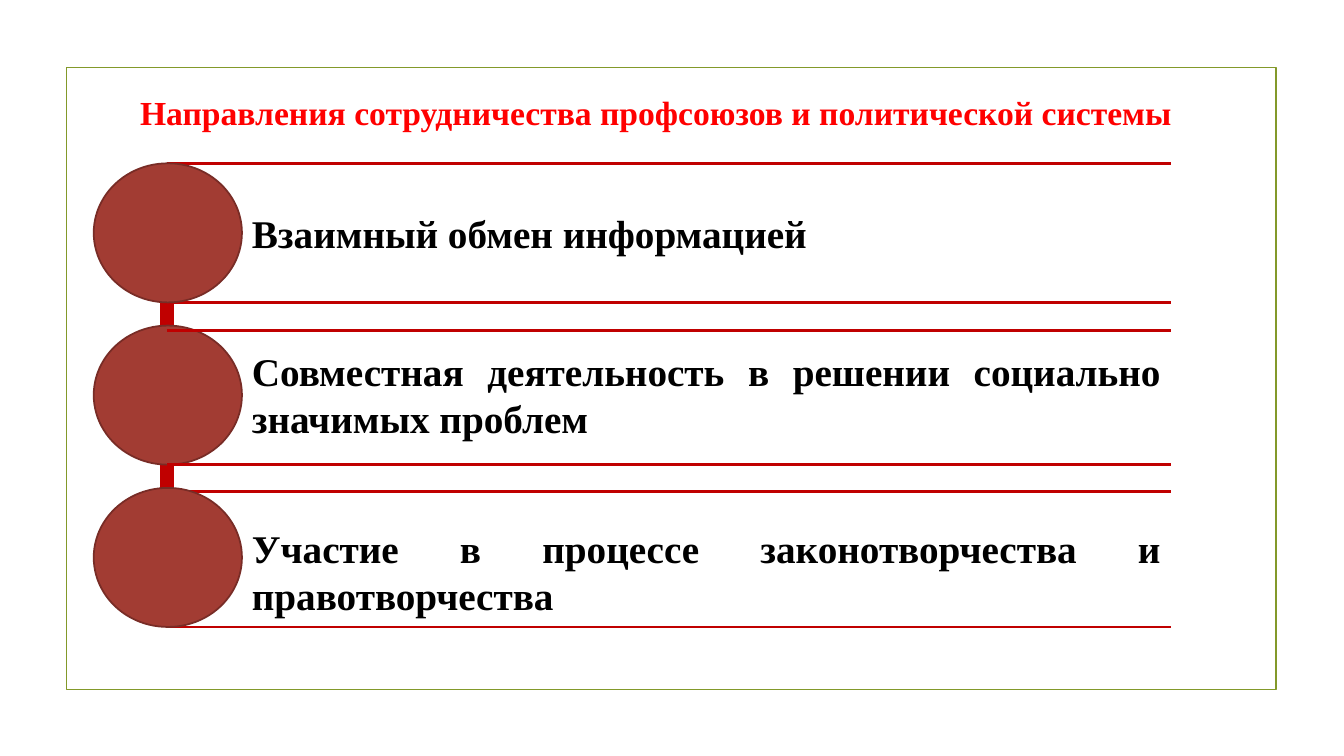
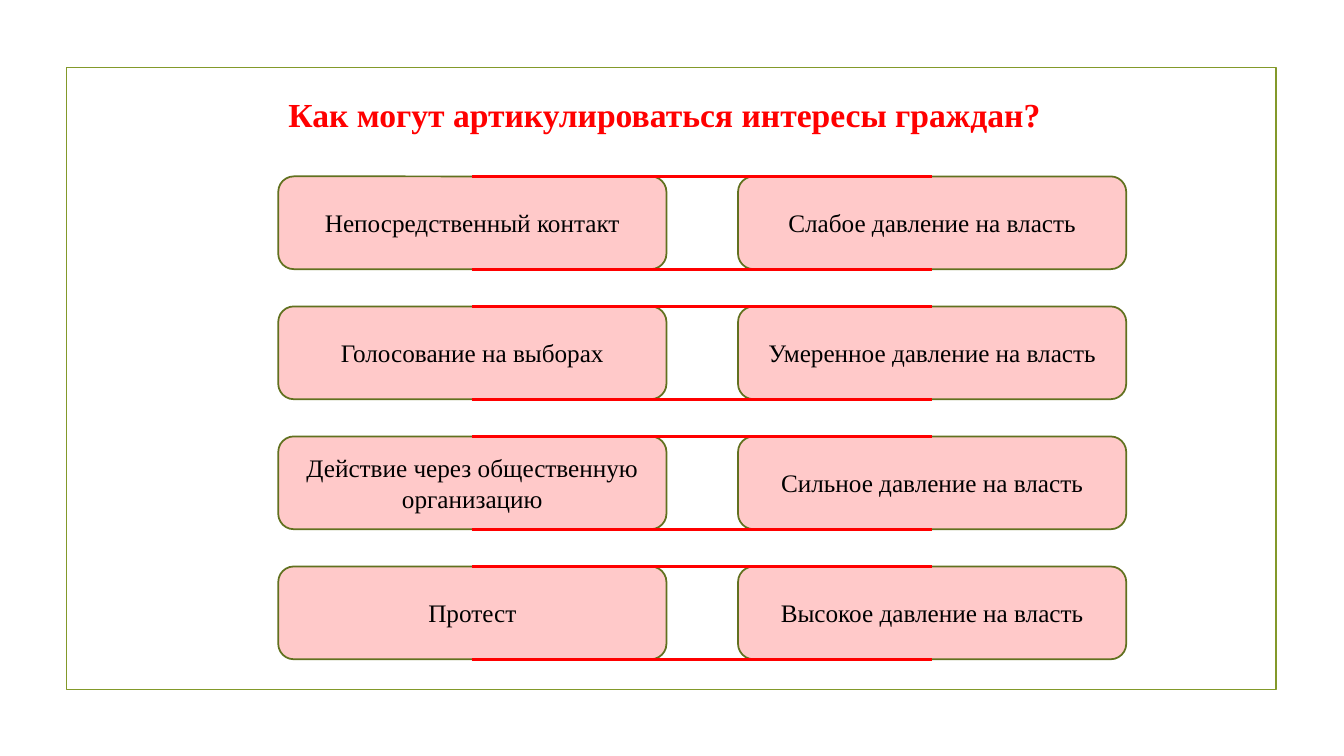
"""Build two slides on how unions and citizens interact with political power."""
from dataclasses import dataclass

from lxml import etree
from pptx import Presentation
from pptx import util as u
from pptx.dml.color import RGBColor
from pptx.enum import shapes, text
from pptx.oxml import ns

SCALE = u.Inches(1) // 100
SLIDE_SIZE = (1333, 750)
FRAME = (66, 67, 1200, 617)


@dataclass(frozen=True)
class Theme:
    """Colours, type sizes and line widths of the deck."""
    font: str = "Times New Roman"
    frame: str = "83992A"
    title: str = "FF0000"
    ink: str = "000000"
    rail: str = "C00000"
    bead: str = "A23C33"
    bead_edge: str = "782C26"
    card: str = "FF0000"
    card_edge: str = "61711F"
    card_opacity: int = 21
    title_size: int = 24
    direction_size: int = 28
    card_size: int = 18
    edge_width: float = 1.25
    rule_width: int = 2
    spine_width: int = 10


THEME = Theme()


@dataclass(frozen=True)
class Direction:
    """A direction of cooperation and its offsets from the top of its bead."""
    label: str
    rule_offset: int
    label_offset: int
    label_height: int
    rules_in_front: bool = False


DIRECTIONS = (
    Direction("Взаимный обмен информацией", 0, 41, 57),
    Direction("Совместная деятельность в решении социально значимых проблем",
              5, 17, 104, rules_in_front=True),
    Direction("Участие в процессе законотворчества и правотворчества", 4, 31, 104),
)

PRESSURE = (
    ("Непосредственный контакт", "Слабое давление на власть"),
    ("Голосование на выборах", "Умеренное давление на власть"),
    ("Действие через общественную организацию", "Сильное давление на власть"),
    ("Протест", "Высокое давление на власть"),
)


def px(*lengths):
    """Turn px lengths into EMU."""
    return [u.Emu(length * SCALE) for length in lengths]


def write(frame, wording, size, color, align, bold=False):
    """Write one formatted paragraph into a text frame."""
    frame.word_wrap = True
    frame.text = wording
    paragraph = frame.paragraphs[0]
    paragraph.alignment = align
    font = paragraph.font
    font.name, font.size, font.bold = THEME.font, u.Pt(size), bold
    font.color.rgb = RGBColor.from_string(color)


def add_outline(slide, kind, box, edge, fill=None, opacity=100):
    """Add a preset shape with an edge and an optional fill."""
    shape = slide.shapes.add_shape(kind, *px(*box))
    shape.shadow.inherit = False
    shape.line.color.rgb = RGBColor.from_string(edge)
    shape.line.width = u.Pt(THEME.edge_width)
    if fill is None:
        shape.fill.background()
        return shape
    shape.fill.solid()
    shape.fill.fore_color.rgb = RGBColor.from_string(fill)
    if opacity < 100:
        tint = shape.fill._xPr.find(".//" + ns.qn("a:srgbClr"))
        etree.SubElement(tint, ns.qn("a:alpha"), val=str(opacity * 1000))
    return shape


def add_line(slide, start, end, color, width):
    """Add a straight line without a shadow."""
    line = slide.shapes.add_connector(shapes.MSO_CONNECTOR.STRAIGHT, *px(*start, *end))
    line.line.color.rgb = RGBColor.from_string(color)
    line.line.width = u.Pt(width)
    etree.SubElement(line._element.spPr, ns.qn("a:effectLst"))


def add_rules(slide, left, right, levels, color):
    """Add horizontal rules of equal span at the given levels."""
    for level in levels:
        add_line(slide, (left, level), (right, level), color, THEME.rule_width)


def add_titled_slide(deck, wording, box, align):
    """Add a framed slide with its title."""
    slide = deck.slides.add_slide(deck.slide_layouts[5])
    add_outline(slide, shapes.MSO_SHAPE.RECTANGLE, FRAME, THEME.frame)
    title = slide.shapes.title
    title.left, title.top, title.width, title.height = px(*box)
    title.text_frame.auto_size = text.MSO_AUTO_SIZE.NONE
    title.text_frame.vertical_anchor = text.MSO_ANCHOR.TOP
    write(title.text_frame, wording, THEME.title_size, THEME.title, align, bold=True)
    return slide


def add_direction(slide, direction, box, bead_width):
    """Add a bead, its two rules and the label beside it."""
    left, top, width, height = box
    levels = (top + direction.rule_offset, top + height)
    rules = (slide, left + bead_width // 2, left + width, levels, THEME.rail)
    if not direction.rules_in_front:
        add_rules(*rules)
    add_outline(slide, shapes.MSO_SHAPE.OVAL, (left, top, bead_width, height),
                THEME.bead_edge, THEME.bead)
    if direction.rules_in_front:
        add_rules(*rules)
    label = slide.shapes.add_textbox(*px(
        left + bead_width, top + direction.label_offset,
        width - bead_width, direction.label_height))
    write(label.text_frame, direction.label, THEME.direction_size, THEME.ink,
          text.PP_ALIGN.JUSTIFY, bold=True)


def add_directions(slide, box, bead=(147, 138)):
    """Thread the directions on a vertical spine spread over the box."""
    left, top, width, height = box
    bead_width, bead_height = bead
    pitch = (height - bead_height) // (len(DIRECTIONS) - 1)
    spine = left + bead_width // 2
    add_line(slide, (spine, top), (spine, top + height), THEME.rail, THEME.spine_width)
    for index, direction in enumerate(DIRECTIONS):
        add_direction(slide, direction,
                      (left, top + index * pitch, width, bead_height), bead_width)


def add_pressure_grid(slide, box, card=(385, 92)):
    """Pair each way of acting with its pressure, joined by two rules."""
    left, top, width, height = box
    card_width, card_height = card
    column_pitch = width - card_width
    row_pitch = (height - card_height) // (len(PRESSURE) - 1)
    center = left + card_width // 2
    for row, pair in enumerate(PRESSURE):
        row_top = top + row * row_pitch
        for column, wording in enumerate(pair):
            cell = (left + column * column_pitch, row_top, card_width, card_height)
            card_shape = add_outline(slide, shapes.MSO_SHAPE.ROUNDED_RECTANGLE, cell,
                                     THEME.card_edge, THEME.card, THEME.card_opacity)
            card_shape.text_frame.vertical_anchor = text.MSO_ANCHOR.MIDDLE
            write(card_shape.text_frame, wording, THEME.card_size, THEME.ink,
                  text.PP_ALIGN.CENTER)
        add_rules(slide, center, center + column_pitch,
                  (row_top, row_top + card_height), THEME.title)


def main():
    """Build and save the deck."""
    deck = Presentation()
    deck.slide_width, deck.slide_height = px(*SLIDE_SIZE)
    cooperation = add_titled_slide(
        deck, "Направления сотрудничества профсоюзов и политической системы",
        (93, 86, 1115, 50), text.PP_ALIGN.CENTER)
    add_directions(cooperation, (93, 162, 1068, 460))
    interests = add_titled_slide(
        deck, "Как могут артикулироваться интересы граждан?",
        (276, 88, 774, 50), text.PP_ALIGN.LEFT)
    add_pressure_grid(interests, (276, 175, 841, 479))
    deck.save("out.pptx")


if __name__ == "__main__":
    main()
